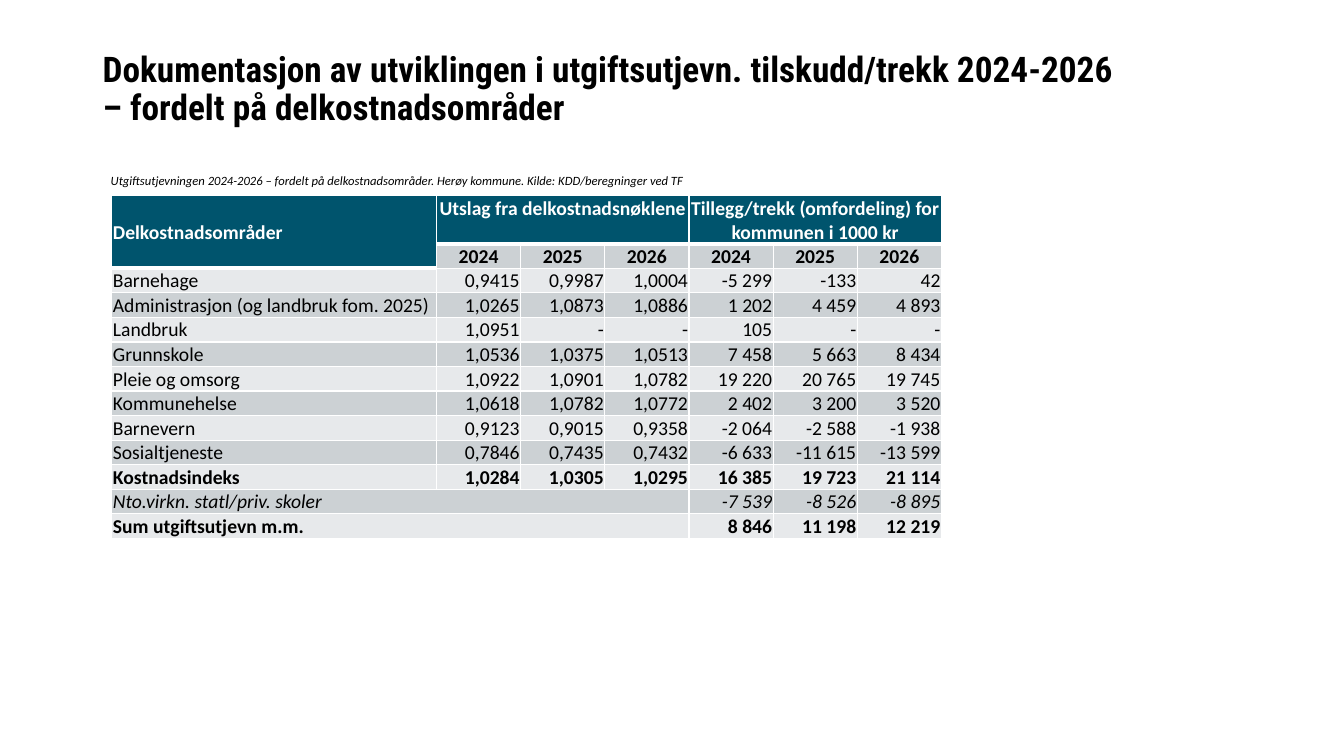
"""Build a slide with a table of expenditure equalisation by cost area."""
from lxml.etree import SubElement
from pptx import Presentation
from pptx.dml.color import RGBColor
from pptx.enum.text import MSO_ANCHOR, PP_ALIGN
from pptx.oxml.ns import qn
from pptx.util import Inches, Pt

BLACK = RGBColor(0x00, 0x00, 0x00)
WHITE = RGBColor(0xFF, 0xFF, 0xFF)
TEAL = RGBColor(0x00, 0x54, 0x6D)
DARK_BAND = RGBColor(0xCC, 0xD1, 0xD4)
LIGHT_BAND = RGBColor(0xE7, 0xE9, 0xEB)


def write(paragraph, text, color=BLACK, **formats):
    paragraph.text = text
    for span in paragraph.runs:
        span.font.color.rgb = color
        for name, value in formats.items():
            setattr(span.font, name, value)


def add_borders(cell, bottom_width):
    properties = cell._tc.get_or_add_tcPr()
    for side, width in {"L": 1, "R": 1, "T": 1, "B": bottom_width}.items():
        line = SubElement(properties, qn(f"a:ln{side}"), w=str(Pt(width)))
        solid = SubElement(line, qn("a:solidFill"))
        SubElement(solid, qn("a:srgbClr"), val=str(WHITE))


deck = Presentation()
deck.slide_width, deck.slide_height = Inches(13.33), Inches(7.5)
page = deck.slides.add_slide(deck.slide_layouts[6])

title = page.shapes.add_textbox(Inches(0.92), Inches(0.4), Inches(11.5), Inches(0.92))
title.text_frame.word_wrap = True
title.text_frame.vertical_anchor = MSO_ANCHOR.BOTTOM
heading = title.text_frame.paragraphs[0]
heading.line_spacing = 0.9
write(heading,
      "Dokumentasjon av utviklingen i utgiftsutjevn. tilskudd/trekk 2024-2026\v"
      "– fordelt på delkostnadsområder",
      name="Roboto Condensed", size=Pt(25.2), bold=True)

caption = page.shapes.add_textbox(Inches(1), Inches(1.67), Inches(8.34), Inches(0.25))
caption.text_frame.word_wrap = True
write(caption.text_frame.paragraphs[0],
      "Utgiftsutjevningen 2024-2026 – fordelt på delkostnadsområder. "
      "Herøy kommune. Kilde: KDD/beregninger ved TF",
      name="Calibri", size=Pt(9), italic=True)

YEARS = ["2024", "2025", "2026"]
ROWS = [
    ["Delkostnadsområder", "Utslag fra delkostnadsnøklene", "", "",
     "Tillegg/trekk (omfordeling) for kommunen i 1000 kr", "", ""],
    ["", *YEARS, *YEARS],
    ["Barnehage", "0,9415", "0,9987", "1,0004", "-5 299", "-133", "42"],
    ["Administrasjon (og landbruk fom. 2025)",
     "1,0265", "1,0873", "1,0886", "1 202", "4 459", "4 893"],
    ["Landbruk", "1,0951", "-", "-", "105", "-", "-"],
    ["Grunnskole", "1,0536", "1,0375", "1,0513", "7 458", "5 663", "8 434"],
    ["Pleie og omsorg", "1,0922", "1,0901", "1,0782", "19 220", "20 765", "19 745"],
    ["Kommunehelse", "1,0618", "1,0782", "1,0772", "2 402", "3 200", "3 520"],
    ["Barnevern", "0,9123", "0,9015", "0,9358", "-2 064", "-2 588", "-1 938"],
    ["Sosialtjeneste", "0,7846", "0,7435", "0,7432", "-6 633", "-11 615", "-13 599"],
    ["Kostnadsindeks", "1,0284", "1,0305", "1,0295", "16 385", "19 723", "21 114"],
    ["Nto.virkn. statl/priv. skoler", "", "", "", "-7 539", "-8 526", "-8 895"],
    ["Sum utgiftsutjevn m.m.", "", "", "", "8 846", "11 198", "12 219"],
]
BOLD_ROWS = {0, 1, 10, 12}
ITALIC_ROW = 11
MERGES = [(0, 0, 1, 0), (0, 1, 0, 3), (0, 4, 0, 6), (11, 0, 11, 3), (12, 0, 12, 3)]

table = page.shapes.add_table(len(ROWS), 7, Inches(1.11), Inches(1.94),
                              Inches(8.23), Inches(3.4)).table
table.first_row = table.horz_banding = False
for index, column in enumerate(table.columns):
    column.width = Inches((8.23 - 3.22) / 6 if index else 3.22)

for row_index, texts in enumerate(ROWS):
    table.rows[row_index].height = Inches(0.24 if row_index else 0.47)
    for column_index, text in enumerate(texts):
        cell = table.cell(row_index, column_index)
        is_header = row_index == 0
        add_borders(cell, 3 if is_header else 1)
        cell.fill.solid()
        band = DARK_BAND if row_index % 2 else LIGHT_BAND
        cell.fill.fore_color.rgb = TEAL if is_header else band
        cell.margin_left = cell.margin_right = cell.margin_top = Inches(0.01)
        cell.margin_bottom = 0
        cell.vertical_anchor = MSO_ANCHOR.BOTTOM
        para = cell.text_frame.paragraphs[0]
        if column_index:
            para.alignment = PP_ALIGN.CENTER if row_index < 2 else PP_ALIGN.RIGHT
        write(para, text, WHITE if is_header else BLACK, name="Calibri", size=Pt(14),
              bold=row_index in BOLD_ROWS, italic=row_index == ITALIC_ROW)

for top, left, bottom, right in MERGES:
    table.cell(top, left).merge(table.cell(bottom, right))
table.cell(0, 0).vertical_anchor = MSO_ANCHOR.MIDDLE
table.cell(0, 1).vertical_anchor = MSO_ANCHOR.TOP

deck.save("out.pptx")
